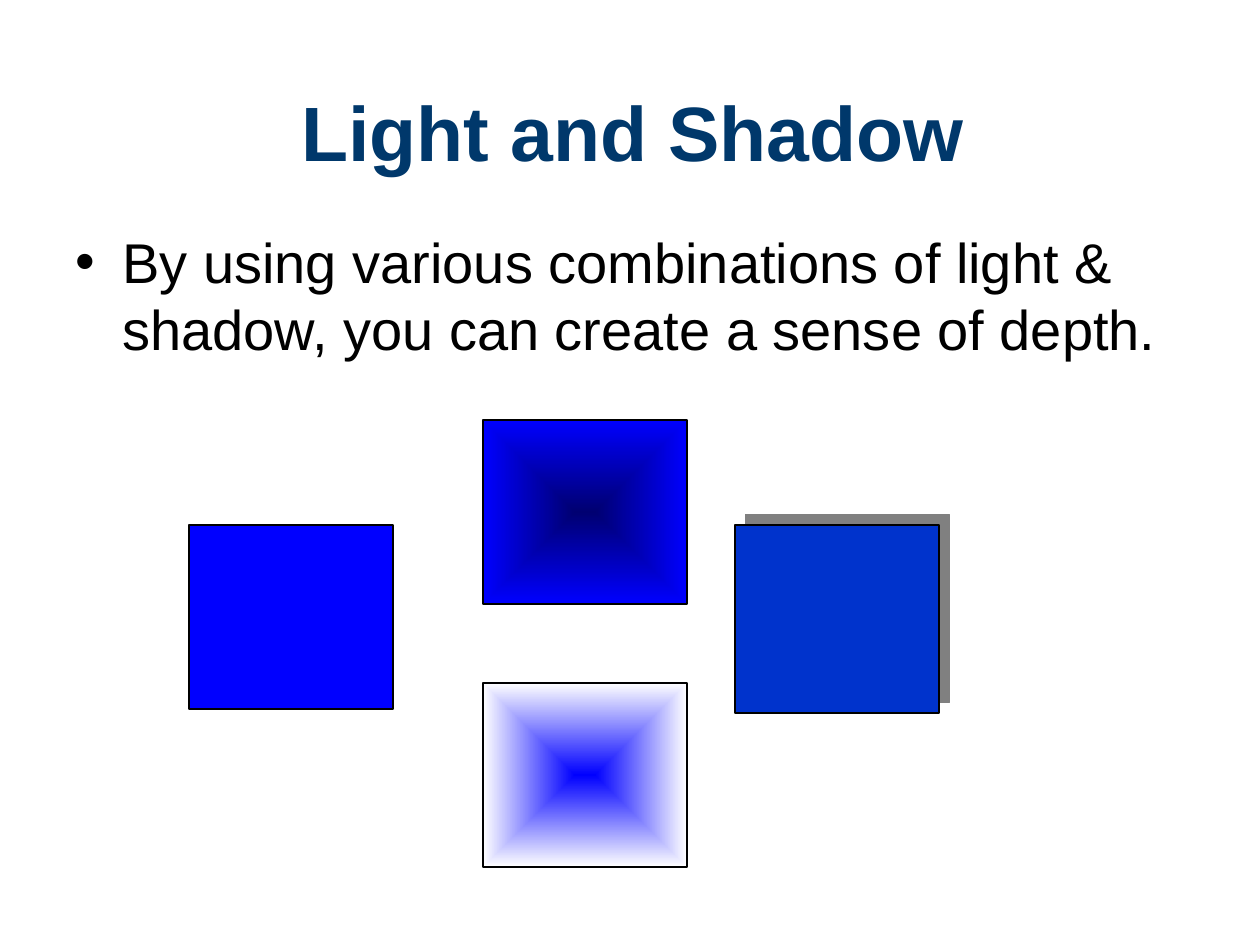
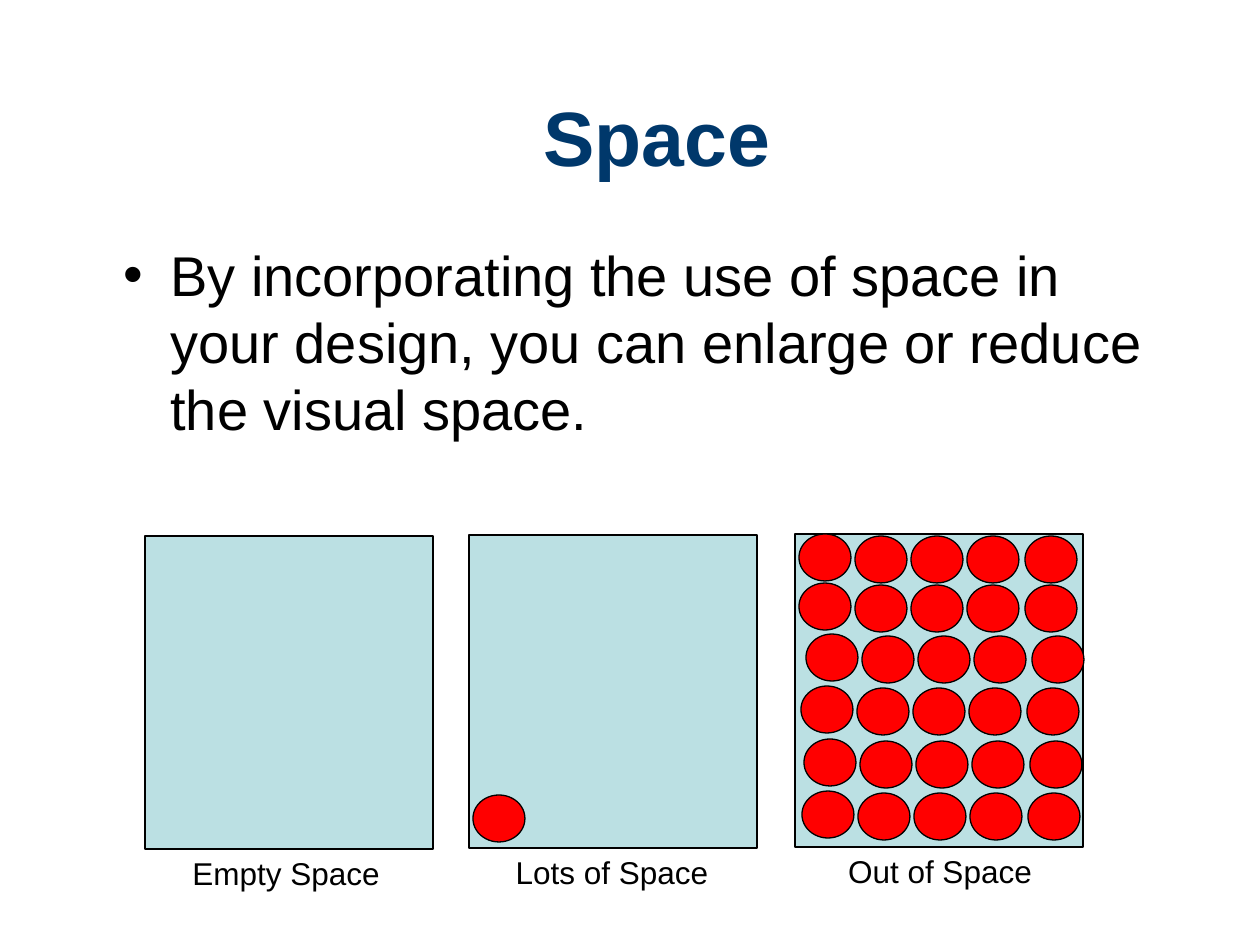
import pptx
import pptx.util
import pptx.dml.color
import pptx.enum.shapes
import pptx.enum.text
import pptx.oxml
import pptx.oxml.ns

RGBColor = pptx.dml.color.RGBColor
SHAPES = pptx.enum.shapes.MSO_SHAPE
ALIGN = pptx.enum.text.PP_ALIGN
ANCHOR = pptx.enum.text.MSO_ANCHOR

NAVY = RGBColor(0x00, 0x38, 0x6B)
BLACK = RGBColor(0x00, 0x00, 0x00)
WHITE = RGBColor(0xFF, 0xFF, 0xFF)
BLUE = RGBColor(0x00, 0x00, 0xFF)
DARK_BLUE = RGBColor(0x00, 0x00, 0x71)
ROYAL_BLUE = RGBColor(0x00, 0x33, 0xCC)
GREY = RGBColor(0x80, 0x80, 0x80)
PALE_TEAL = RGBColor(0xBB, 0xE0, 0xE3)
RED = RGBColor(0xFF, 0x00, 0x00)

PX_PER_INCH = 126
FONT = "Arial"
BULLET_INDENT = 47
TITLE = {"size": pptx.util.Pt(44), "bold": True}
BODY = {"size": pptx.util.Pt(32)}
CAPTION = {"size": pptx.util.Pt(18)}
NAMESPACE = pptx.oxml.ns.nsdecls("a")


def px(length):
    return pptx.util.Emu(round(length * 914400 / PX_PER_INCH))


def apply_format(target, values):
    for name, value in values.items():
        setattr(target, name, value)


def add_text(page, box, text, font, colour, frame_format, para_format):
    frame = page.shapes.add_textbox(*map(px, box)).text_frame
    apply_format(frame, {"word_wrap": True, **frame_format})
    para = frame.paragraphs[0]
    apply_format(para, para_format)
    span = para.add_run()
    span.text = text
    apply_format(span.font, {"name": FONT, **font})
    span.font.color.rgb = colour
    return para


def add_title(page, box, text):
    add_text(page, box, text, TITLE, NAVY,
             {"vertical_anchor": ANCHOR.MIDDLE}, {"alignment": ALIGN.CENTER})


def add_bullet(page, box, text):
    para = add_text(page, box, text, BODY, BLACK,
                    {"vertical_anchor": ANCHOR.TOP},
                    {"space_before": pptx.util.Pt(6.4)})
    properties = para._p.get_or_add_pPr()
    properties.set("marL", str(px(BULLET_INDENT)))
    properties.set("indent", str(-px(BULLET_INDENT)))
    for markup in (f'<a:buFont {NAMESPACE} typeface="{FONT}"/>',
                   f'<a:buChar {NAMESPACE} char="•"/>'):
        properties.append(pptx.oxml.parse_xml(markup))


def add_caption(page, box, text):
    add_text(page, box, text, CAPTION, BLACK, {},
             {"alignment": ALIGN.CENTER, "space_before": pptx.util.Pt(9)})


def add_outlined(page, box, kind, colour):
    shape = page.shapes.add_shape(kind, *map(px, box))
    shape.shadow.inherit = False
    shape.fill.solid()
    shape.fill.fore_color.rgb = colour
    shape.line.color.rgb = BLACK
    shape.line.width = pptx.util.Pt(0.75)
    return shape


def add_glow(shape, centre, edge):
    shape.fill.gradient()
    for stop, colour in zip(shape.fill.gradient_stops, (centre, edge)):
        stop.color.rgb = colour
    linear = shape._element.spPr.find(".//" + pptx.oxml.ns.qn("a:lin"))
    linear.getparent().replace(linear, pptx.oxml.parse_xml(
        f'<a:path {NAMESPACE} path="shape">'
        '<a:fillToRect l="50000" t="50000" r="50000" b="50000"/></a:path>'))


def add_hard_shadow(shape, colour):
    effects = shape._element.spPr.find(pptx.oxml.ns.qn("a:effectLst"))
    effects.append(pptx.oxml.parse_xml(
        f'<a:outerShdw {NAMESPACE} dist="{pptx.util.Pt(8.5)}" dir="18900000" '
        f'algn="ctr" rotWithShape="0"><a:srgbClr val="{colour}"/></a:outerShdw>'))


def add_squares(page, box):
    left, top, width, height = box
    middle = left + 294
    add_hard_shadow(
        add_outlined(page, (left + 546, top + 105, width, height + 4),
                     SHAPES.RECTANGLE, ROYAL_BLUE), GREY)
    add_outlined(page, (left, top + 105, width, height), SHAPES.RECTANGLE, BLUE)
    for drop, centre, edge in ((0, DARK_BLUE, BLUE), (263, BLUE, WHITE)):
        square = add_outlined(page, (middle, top + drop, width, height),
                              SHAPES.RECTANGLE, BLUE)
        add_glow(square, centre, edge)


def add_dot(page, left, top):
    add_outlined(page, (left, top, 52, 47), SHAPES.OVAL, RED)


def add_panel(page, box, caption, caption_shift):
    left, top, width, height = box
    add_outlined(page, box, SHAPES.RECTANGLE, PALE_TEAL)
    add_caption(page, (left + caption_shift, top + height - 1, 284, 50), caption)


def fill_with_dots(page, left, top):
    row_offsets = ((0, 0), (0, 49), (7, 100), (2, 152), (5, 205), (3, 257))
    for indent, drop in row_offsets:
        for column, step in enumerate((0, 56, 112, 168, 226)):
            add_dot(page, left + 4 + indent + step, top + drop + 2 * (column > 0))


def build_light_page(deck):
    page = deck.slides.add_slide(deck.slide_layouts[6])
    add_title(page, (105, 68, 1056, 126), "Light and Shadow")
    add_bullet(page, (63, 221, 1134, 624),
               "By using various combinations of light & shadow, "
               "you can create a sense of depth.")
    add_squares(page, (189, 420, 204, 184))


def build_space_page(deck):
    page = deck.slides.add_slide(deck.slide_layouts[6])
    add_title(page, (237, 57, 840, 158), "Space")
    add_bullet(page, (111, 234, 1045, 233),
               "By incorporating the use of space in your design, "
               "you can enlarge or reduce the visual space.")
    for left, top, caption, shift in ((145, 536, "Empty Space", -1),
                                      (469, 535, "Lots of Space", 1),
                                      (795, 534, "Out of Space", 3)):
        add_panel(page, (left, top, 288, 313), caption, shift)
    add_dot(page, 469 + 4, 535 + 260)
    fill_with_dots(page, 795, 534)


def main():
    deck = pptx.Presentation()
    deck.slide_width = px(10 * PX_PER_INCH)
    deck.slide_height = px(7.5 * PX_PER_INCH)
    build_light_page(deck)
    build_space_page(deck)
    deck.save("out.pptx")


if __name__ == "__main__":
    main()
